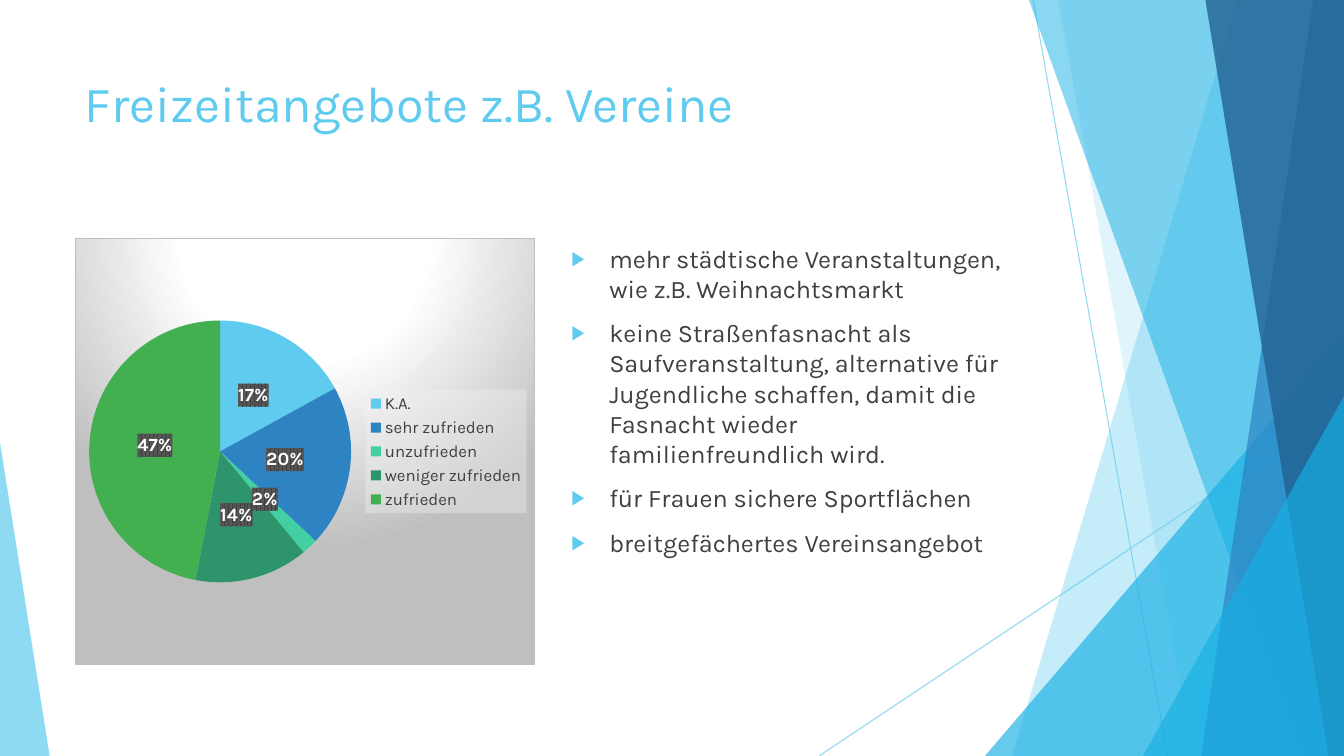
from pptx import Presentation
from pptx.chart.data import CategoryChartData
from pptx.dml.color import RGBColor
from pptx.enum.chart import XL_CHART_TYPE, XL_LABEL_POSITION, XL_LEGEND_POSITION
from pptx.enum.shapes import MSO_CONNECTOR, MSO_SHAPE
from pptx.enum.text import MSO_ANCHOR, MSO_AUTO_SIZE, PP_ALIGN
from pptx.oxml import parse_xml
from pptx.oxml.ns import nsdecls, qn
from pptx.util import Pt


class Theme:
    font = "Karla"
    sky, cyan, blue, navy = "5FCBEF", "17B0E4", "2E83C3", "226292"
    text, white, grey = "404040", "FFFFFF", "BFBFBF"
    slices = [sky, blue, "42D0A2", "2E946B", "42B051"]
    title_size, body_size, label_size, legend_size = 36, 18, 13.3, 12


def style(font, size, color, bold=False):
    font.name, font.size, font.bold = Theme.font, Pt(size), bold
    font.color.rgb = RGBColor.from_string(color)


def tint(fill, color, alpha):
    """Set a solid fill with an opacity in percent."""
    fill.solid()
    fill.fore_color.rgb = RGBColor.from_string(color)
    clr = fill._xPr.find(".//" + qn("a:srgbClr"))
    clr.append(parse_xml(f'<a:alpha {nsdecls("a")} val="{alpha * 1000}"/>'))


deck = Presentation()
deck.slide_width, deck.slide_height = Pt(960), Pt(540)
slide = deck.slides.add_slide(deck.slide_layouts[1])
shapes = slide.shapes
title, body = slide.placeholders

# Background lines
for x1, y1, x2, y2 in [(738, 0, 834, 540), (960, 290, 585, 540)]:
    line = shapes.add_connector(MSO_CONNECTOR.STRAIGHT, Pt(x1), Pt(y1), Pt(x2), Pt(y2))
    line.line.width = Pt(0.75)
    tint(line.line.fill, Theme.sky, 70)
    line.element.spPr.append(parse_xml(f'<a:effectLst {nsdecls("a")}/>'))

# Bands run to the right edge: top x, bottom x, colour, opacity
# Wedges: left, top, width, height, apex, colour, opacity
wedge = MSO_SHAPE.ISOSCELES_TRIANGLE
facets = [
    (884, 723, Theme.sky, 36),
    (756, 852, Theme.sky, 20),
    (703.5, 240, 256.5, 300, 1, Theme.cyan, 66),
    (735, 929.5, Theme.cyan, 50),
    (938, 858, Theme.blue, 70),
    (861, 949, Theme.navy, 80),
    (816.5, 283, 143.5, 257, 1, Theme.cyan, 66),
    (0, 316, 35.5, 224, 0, Theme.sky, 70),
]
for *place, color, alpha in facets:
    if len(place) == 2:
        top, base = place
        pen = shapes.build_freeform(Pt(top), 0)
        pen.add_line_segments([(Pt(960), 0), (Pt(960), Pt(540)), (Pt(base), Pt(540))])
        facet = pen.convert_to_shape()
    else:
        *box, apex = place
        facet = shapes.add_shape(wedge, *map(Pt, box))
        facet.adjustments[0] = apex
    tint(facet.fill, color, alpha)
    facet.line.fill.background()
    facet.shadow.inherit = False

# Title and list stand in front of the facets
for holder, box in [(title, (53.5, 48, 677, 104)), (body, (401, 170, 330, 305))]:
    holder.left, holder.top, holder.width, holder.height = map(Pt, box)
    holder.element.getparent().append(holder.element)
    frame = holder.text_frame
    frame.word_wrap = True
    frame.auto_size = MSO_AUTO_SIZE.NONE
    frame.vertical_anchor = MSO_ANCHOR.TOP

title.text_frame.text = "Freizeitangebote z.B. Vereine"
head = title.text_frame.paragraphs[0]
head.alignment = PP_ALIGN.LEFT
style(head.runs[0].font, Theme.title_size, Theme.sky)

body.text_frame.text = "\n".join([
    "mehr städtische Veranstaltungen, wie z.B. Weihnachtsmarkt",
    "keine Straßenfasnacht als Saufveranstaltung, alternative für "
    "Jugendliche schaffen, damit die Fasnacht wieder familienfreundlich wird.",
    "für Frauen sichere Sportflächen",
    "breitgefächertes Vereinsangebot",
])
for i, item in enumerate(body.text_frame.paragraphs):
    props = item._p.get_or_add_pPr()
    props.set("marL", str(Pt(27)))
    props.set("indent", str(-Pt(27)))
    for mark in (
        f'<a:buClr {nsdecls("a")}><a:srgbClr val="{Theme.sky}"/></a:buClr>',
        f'<a:buSzPct {nsdecls("a")} val="80000"/>',
        f'<a:buChar {nsdecls("a")} char="▶"/>',
    ):
        props.append(parse_xml(mark))
    item.space_before = Pt(10 if i else 0)
    style(item.runs[0].font, Theme.body_size, Theme.text)

# Pie chart
data = CategoryChartData()
data.categories = ["K.A.", "sehr zufrieden", "unzufrieden", "weniger zufrieden", "zufrieden"]
data.add_series("Series 1", [17, 20, 2, 14, 47])
chart = shapes.add_chart(
    XL_CHART_TYPE.PIE, Pt(53.5), Pt(170), Pt(329), Pt(305), data).chart
chart.has_title = False
style(chart.font, 10, "000000")
plot = chart.plots[0]
plot.vary_by_categories = True
for i, color in enumerate(Theme.slices):
    part = plot.series[0].points[i].format
    part.fill.solid()
    part.fill.fore_color.rgb = RGBColor.from_string(color)
    part.line.fill.background()

plot.has_data_labels = True
labels = plot.data_labels
labels.show_percentage, labels.show_value = True, False
labels.number_format, labels.number_format_is_linked = "0%", False
labels.position = XL_LABEL_POSITION.CENTER
style(labels.font, Theme.label_size, Theme.white, True)

chart.has_legend = True
legend = chart.legend
legend.position = XL_LEGEND_POSITION.RIGHT
legend.include_in_layout = False
style(legend.font, Theme.legend_size, Theme.text)

# Chart backgrounds that need XML
stops = [(0, Theme.white), (39, Theme.white), (100, Theme.grey)]
glow = "".join(
    f'<a:gs pos="{at * 1000}"><a:srgbClr val="{color}"/></a:gs>' for at, color in stops)
fills = [
    (chart.element,
     f'<a:gradFill><a:gsLst>{glow}</a:gsLst><a:path path="circle">'
     '<a:fillToRect l="50000" t="-80000" r="50000" b="180000"/></a:path></a:gradFill>'
     f'<a:ln w="9525"><a:solidFill><a:srgbClr val="{Theme.grey}"/></a:solidFill></a:ln>'),
    (chart.element.find(".//" + qn("c:legend")),
     '<a:solidFill><a:srgbClr val="F2F2F2"><a:alpha val="39000"/></a:srgbClr></a:solidFill>'),
    (chart.element.find(".//" + qn("c:dLbls")),
     f'<a:pattFill prst="pct75"><a:fgClr><a:srgbClr val="{Theme.text}"/></a:fgClr>'
     '<a:bgClr><a:srgbClr val="595959"/></a:bgClr></a:pattFill>'),
]
for owner, fill in fills:
    owner.find(qn("c:txPr")).addprevious(
        parse_xml(f'<c:spPr {nsdecls("c", "a")}>{fill}</c:spPr>'))

area = chart.element.find(".//" + qn("c:plotArea"))
for old in area.findall(qn("c:layout")):
    area.remove(old)
sizes = "".join(
    f'<c:{key} val="{val}"/>' for key, val in [("x", 0.03), ("y", 0.19), ("w", 0.57), ("h", 0.62)])
area.insert(0, parse_xml(
    f'<c:layout {nsdecls("c")}><c:manualLayout><c:layoutTarget val="inner"/>'
    f'<c:xMode val="edge"/><c:yMode val="edge"/>{sizes}</c:manualLayout></c:layout>'))

deck.save("out.pptx")
